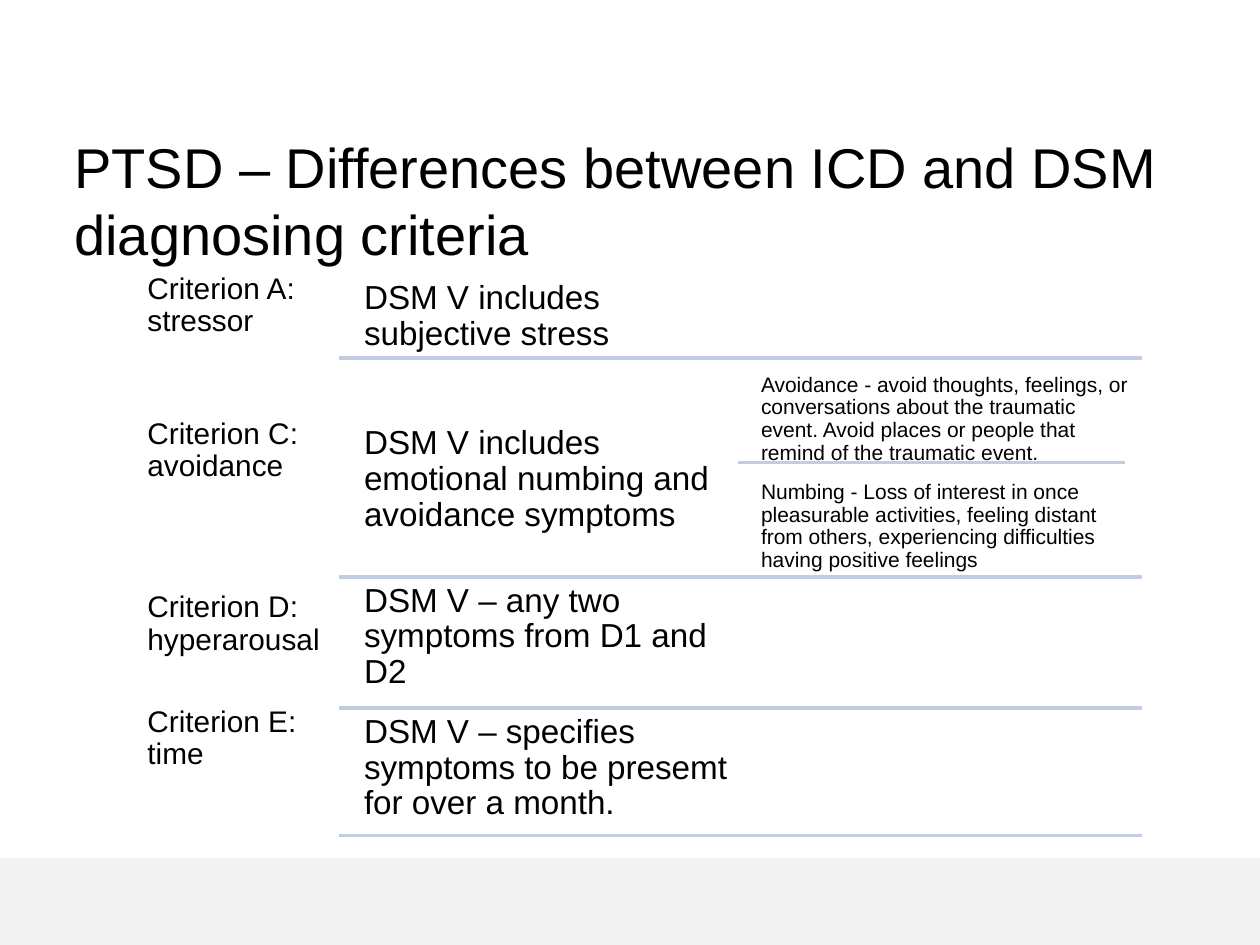
import pptx
import pptx.util
import pptx.dml.color
import pptx.enum.shapes
import pptx.enum.text
import pptx.oxml.ns
from lxml import etree

COLORS = {"text": "000000", "rule": "C2CDE1", "footer": "F2F2F2"}
FONT = "Arial"
WIDTH, HEIGHT = 10, 7.5
FOOTER_TOP = 6.81

TITLE = "PTSD – Differences between ICD and DSM diagnosing criteria"
CRITERIA = [
    {"label": "Criterion A: stressor", "label_top": 2.1,
     "change": "DSM V includes subjective stress", "change_top": 2.15, "rule": 2.84},
    {"label": "Criterion C: avoidance", "label_top": 3.25,
     "change": "DSM V includes emotional numbing and avoidance symptoms",
     "change_top": 3.3, "rule": 4.58},
    {"label": "Criterion D: hyperarousal", "label_top": 4.63,
     "change": "DSM V – any two symptoms from D1 and D2", "change_top": 4.55, "rule": 5.62},
    {"label": "Criterion E: time", "label_top": 5.54,
     "change": "DSM V – specifies symptoms to be presemt for over a month.",
     "change_top": 5.59, "rule": 6.63},
]
SYMPTOMS = [
    "Avoidance - avoid thoughts, feelings, or conversations about the traumatic event. "
    "Avoid places or people that remind of the traumatic event.",
    "Numbing - Loss of interest in once pleasurable activities, feeling distant from others, "
    "experiencing difficulties having positive feelings",
]
SYMPTOM_TOP, SYMPTOM_STEP = 2.92, 0.85
SYMPTOM_RULE = (5.86, 8.93, 3.67)
ROW_RULE = (2.69, 9.06)

COLUMNS = {
    "label": {"left": 1.1, "width": 1.59, "height": 1.15, "size": 17, "inset": 0.07},
    "change": {"left": 2.81, "width": 3.06, "height": 1.04, "size": 19, "inset": 0.08},
    "symptom": {"left": 5.99, "width": 3.06, "height": 0.52, "size": 12, "inset": 0.05},
}


def inches(*lengths):
    return [pptx.util.Inches(length) for length in lengths]


def color(name):
    return pptx.dml.color.RGBColor.from_string(COLORS[name])


def write(box, text, size, inset=None, spacing=None,
          anchor=pptx.enum.text.MSO_ANCHOR.TOP):
    frame = box.text_frame
    frame.word_wrap = True
    frame.auto_size = pptx.enum.text.MSO_AUTO_SIZE.NONE
    frame.vertical_anchor = anchor
    if inset is not None:
        for side in ("left", "top", "right", "bottom"):
            setattr(frame, f"margin_{side}", pptx.util.Inches(inset))
    para = frame.paragraphs[0]
    para.alignment = pptx.enum.text.PP_ALIGN.LEFT
    para.line_spacing = spacing
    span = para.add_run()
    span.text = text
    span.font.name = FONT
    span.font.size = pptx.util.Pt(size)
    span.font.color.rgb = color("text")


def add_cell(page, column, top, text):
    place = COLUMNS[column]
    box = page.shapes.add_textbox(
        *inches(place["left"], top, place["width"], place["height"]))
    write(box, text, place["size"], inset=place["inset"], spacing=0.9)


def add_rule(page, left, right, top):
    rule = page.shapes.add_connector(
        pptx.enum.shapes.MSO_CONNECTOR.STRAIGHT, *inches(left, top, right, top))
    rule.line.color.rgb = color("rule")
    rule.line.width = pptx.util.Pt(2)
    etree.SubElement(rule._element.spPr, pptx.oxml.ns.qn("a:effectLst"))


def add_footer(page):
    band = page.shapes.add_shape(
        pptx.enum.shapes.MSO_SHAPE.RECTANGLE,
        *inches(0, FOOTER_TOP, WIDTH, HEIGHT - FOOTER_TOP))
    band.shadow.inherit = False
    band.fill.solid()
    band.fill.fore_color.rgb = color("footer")
    band.line.fill.background()


def main():
    deck = pptx.Presentation()
    deck.slide_width, deck.slide_height = inches(WIDTH, HEIGHT)
    page = deck.slides.add_slide(deck.slide_layouts.get_by_name("Title Only"))
    add_footer(page)

    title = page.shapes.title
    title.left, title.top, title.width, title.height = inches(0.49, 0.96, 9.12, 1.25)
    write(title, TITLE, 32, anchor=pptx.enum.text.MSO_ANCHOR.MIDDLE)

    for row in CRITERIA:
        add_cell(page, "label", row["label_top"], row["label"])
        add_cell(page, "change", row["change_top"], row["change"])
        add_rule(page, *ROW_RULE, row["rule"])

    for index, symptom in enumerate(SYMPTOMS):
        add_cell(page, "symptom", SYMPTOM_TOP + index * SYMPTOM_STEP, symptom)
    add_rule(page, *SYMPTOM_RULE)

    deck.save("out.pptx")


if __name__ == "__main__":
    main()
